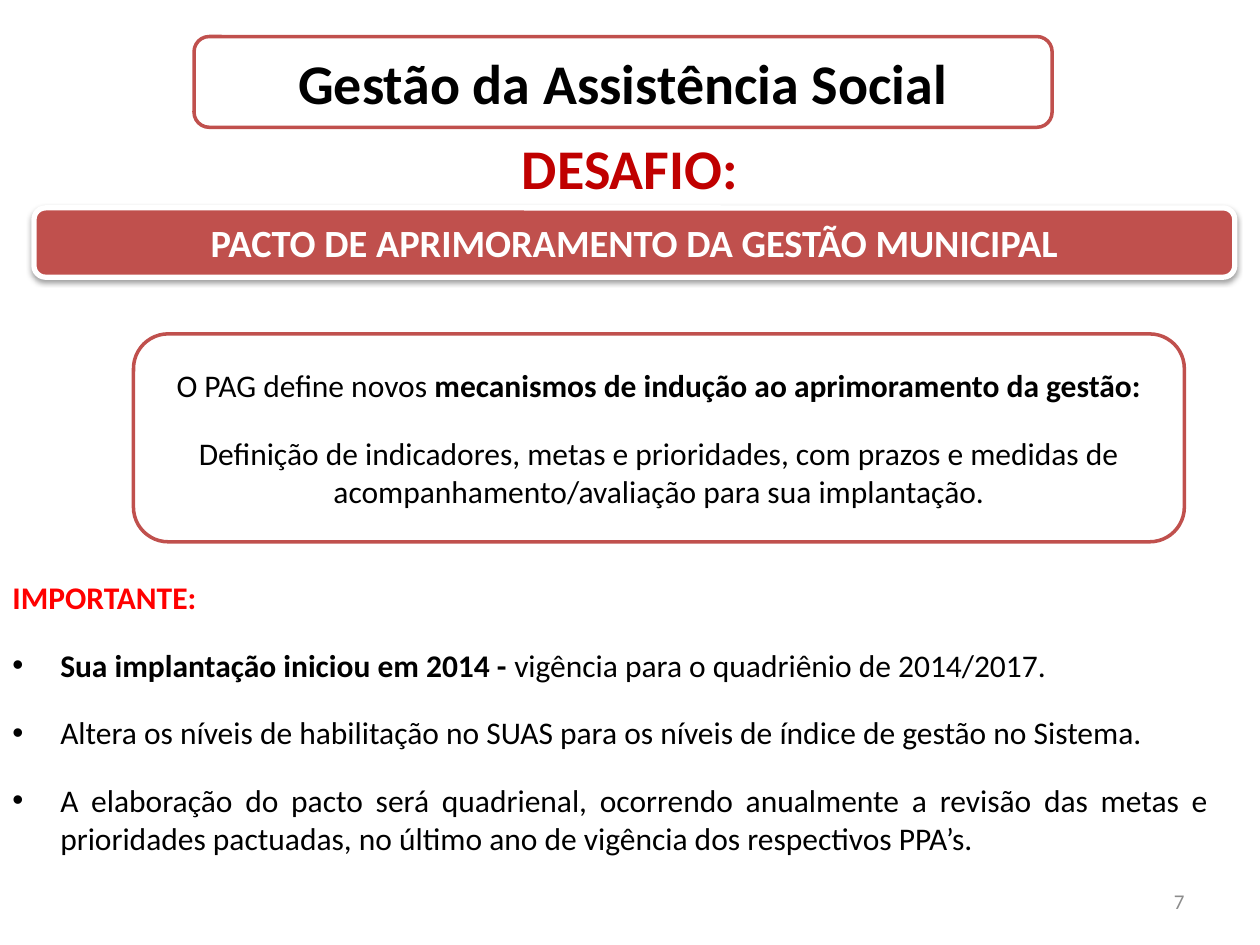
from lxml.etree import SubElement
from pptx import Presentation
from pptx.dml.color import RGBColor
from pptx.enum.shapes import MSO_SHAPE
from pptx.enum.text import MSO_ANCHOR, PP_ALIGN
from pptx.oxml.ns import qn
from pptx.util import Inches, Pt

RED, WHITE, BLACK = "C0504D", "FFFFFF", "000000"


def color(hex_value):
    """Turn a hex string into a colour."""
    return RGBColor.from_string(hex_value)


def apply(target, formats):
    """Set every format value on the target."""
    for name, value in formats.items():
        setattr(target, name, value)


def add_xml(parent, tag, **attributes):
    """Append an element with the given attributes."""
    return SubElement(parent, qn(tag), {key: str(value) for key, value in attributes.items()})


class Deck:
    """Hold the style and the current slide, on a grid of 100 columns by 75 rows."""

    font = "Calibri"
    cell = Inches(0.1)
    hanging = Inches(0.38)

    def __init__(self):
        """Open a presentation with one blank slide."""
        self.presentation = Presentation()
        apply(self.presentation, {"slide_width": 100 * self.cell, "slide_height": 75 * self.cell})
        self.slide = self.presentation.slides.add_slide(self.presentation.slide_layouts[6])

    def place(self, area):
        """Convert columns and rows to lengths."""
        return [round(count * self.cell) for count in area]

    def set_text(self, shape, paragraphs, size=18, ink=BLACK, align=PP_ALIGN.CENTER,
                 anchor=MSO_ANCHOR.MIDDLE, gap=0):
        """Fill a shape with paragraphs of (text, bold, optional colour) runs."""
        frame = shape.text_frame
        apply(frame, {"word_wrap": True, "vertical_anchor": anchor})
        for index, runs in enumerate(paragraphs):
            paragraph = frame.add_paragraph() if index else frame.paragraphs[0]
            apply(paragraph, {"alignment": align, "space_before": Pt(gap if index else 0)})
            for text, bold, *own_ink in runs:
                run = paragraph.add_run()
                run.text = text
                apply(run.font, {"name": self.font, "size": Pt(size), "bold": bold})
                run.font.color.rgb = color(own_ink[0] if own_ink else ink)
        return frame

    def text(self, area, paragraphs, **style):
        """Add a text box."""
        return self.set_text(self.slide.shapes.add_textbox(*self.place(area)), paragraphs, **style)

    def bullets(self, area, heading, items, **style):
        """Add a heading followed by bulleted items."""
        frame = self.text(area, [heading, *items], **style)
        for paragraph in frame.paragraphs[1:]:
            properties = paragraph._p.get_or_add_pPr()
            properties.set("marL", str(self.hanging))
            properties.set("indent", str(-self.hanging))
            add_xml(properties, "a:buFont", typeface="Arial")
            add_xml(properties, "a:buChar", char="•")

    def panel(self, area, paragraphs, fill=WHITE, outline=RED, width=2, raised=False, **style):
        """Add a rounded panel, with a soft shadow when raised."""
        shape = self.slide.shapes.add_shape(MSO_SHAPE.ROUNDED_RECTANGLE, *self.place(area))
        shape.shadow.inherit = False
        shape.fill.solid()
        shape.fill.fore_color.rgb = color(fill)
        shape.line.color.rgb = color(outline)
        shape.line.width = Pt(width)
        if raised:
            effects = shape._element.spPr.find(qn("a:effectLst"))
            shadow = add_xml(effects, "a:outerShdw", blurRad=Pt(3.1), dist=Pt(1.6),
                             dir=90 * 60000, rotWithShape=0)
            add_xml(add_xml(shadow, "a:srgbClr", val=BLACK), "a:alpha", val=38000)
        self.set_text(shape, paragraphs, **style)


def main():
    """Build the slide on the management pact."""
    deck = Deck()
    deck.text((71.7, 69.5, 23.3, 4), [[("7", False)]], size=12, ink="8C8C8C", align=PP_ALIGN.RIGHT)
    deck.bullets(
        (0, 45.4, 96.9, 26.8),
        [("IMPORTANTE:", True, "FF0000")],
        [
            [("Sua implantação iniciou em 2014 - ", True),
             ("vigência para o quadriênio de 2014/2017.", False)],
            [("Altera os níveis de habilitação no SUAS para os níveis de índice de gestão "
              "no Sistema.", False)],
            [("A elaboração do pacto será quadrienal, ocorrendo anualmente a revisão das metas e "
              "prioridades pactuadas, no último ano de vigência dos respectivos PPA’s.", False)],
        ],
        align=PP_ALIGN.JUSTIFY, anchor=MSO_ANCHOR.TOP, gap=17)
    deck.panel(
        (10.6, 26.5, 83.4, 16.5),
        [
            [("O PAG define novos ", False),
             ("mecanismos de indução ao aprimoramento da gestão:", True)],
            [("Definição de indicadores, metas e prioridades, com prazos e medidas de "
              "acompanhamento/avaliação para sua implantação.", False)],
        ],
        gap=17)
    deck.panel((2.7, 16.5, 95.3, 5.5), [[("PACTO DE APRIMORAMENTO DA GESTÃO MUNICIPAL", True)]],
               fill=RED, outline=WHITE, width=3, raised=True, size=22, ink=WHITE)
    deck.text((0, 10.1, 100, 6.4), [[("DESAFIO:", True)]], size=32, ink="C00000",
              anchor=MSO_ANCHOR.TOP)
    deck.panel((15.4, 2.9, 68.1, 7.2), [[("Gestão da Assistência Social", True)]], size=32)
    deck.presentation.save("out.pptx")


if __name__ == "__main__":
    main()
